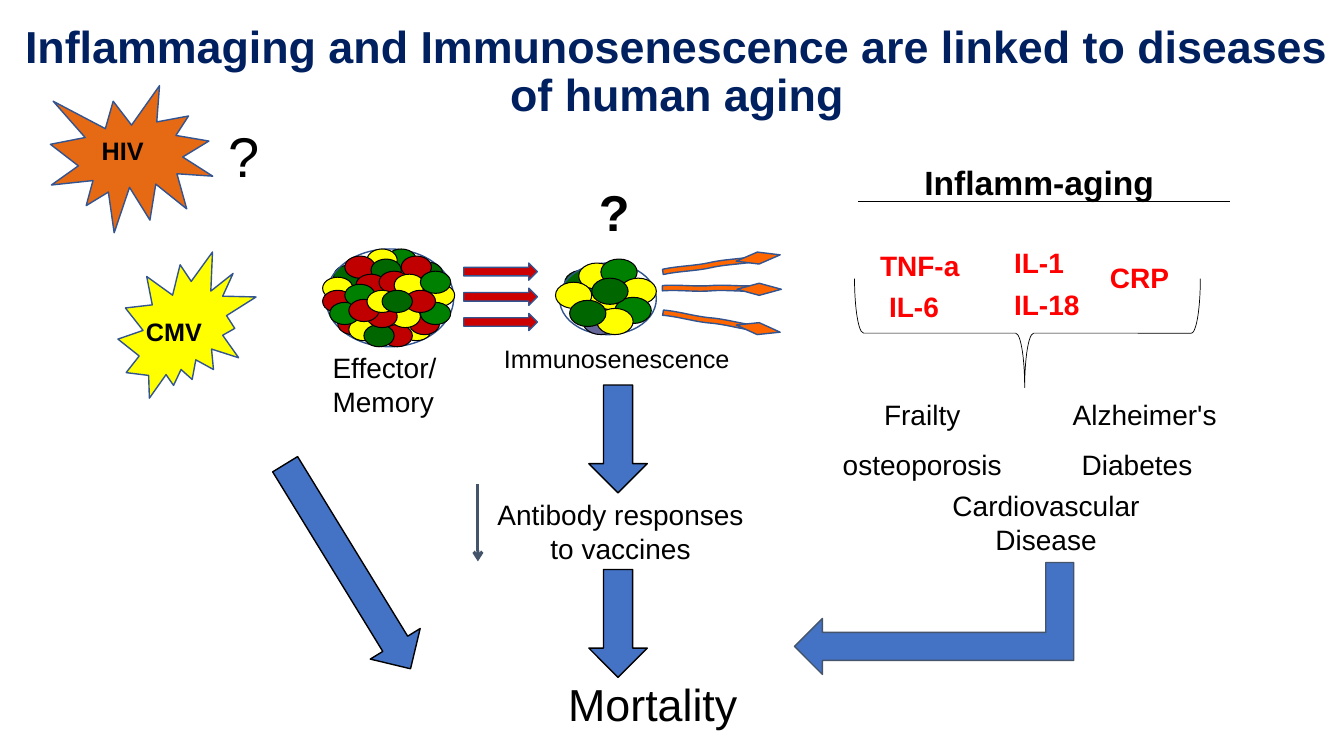
import pptx
import pptx.util
import pptx.dml.color
import pptx.enum.shapes
import pptx.enum.text
import pptx.oxml
import pptx.oxml.ns
from dataclasses import dataclass

Inches = pptx.util.Inches
MSO = pptx.enum.shapes.MSO_SHAPE
ALIGN = pptx.enum.text.PP_ALIGN


@dataclass(frozen=True)
class Theme:
    font: str = "Arial"
    navy: str = "002060"
    black: str = "000000"
    marker_red: str = "FF0000"
    arrow_blue: str = "4472C4"
    outline: str = "325491"
    slate: str = "44546A"
    arrow_red: str = "CC0000"
    antibody: str = "FF6600"
    hiv: str = "E66914"
    dark_green: str = "006600"
    green: str = "008000"
    yellow: str = "FFFF00"
    red: str = "C00000"
    teal: str = "008080"
    violet: str = "666699"
    title: int = 32
    huge: int = 40
    large: int = 36
    heading: int = 24
    body: int = 20
    small: int = 18


class Canvas:
    def __init__(self, slide, theme):
        self.slide = slide
        self.theme = theme

    def text(self, x, y, w, h, text, size=None, color=None, bold=False,
             align=ALIGN.LEFT, wrap=False):
        """Place text; each newline starts a paragraph, each \\v a line break."""
        box = self.slide.shapes.add_textbox(Inches(x), Inches(y), Inches(w), Inches(h))
        tf = box.text_frame
        tf.word_wrap = wrap
        tf.text = text
        for p in tf.paragraphs:
            p.alignment = align
            p.font.name = self.theme.font
            p.font.size = pptx.util.Pt(size or self.theme.body)
            p.font.bold = bold
            p.font.color.rgb = rgb(color or self.theme.black)
        return tf

    def shape(self, kind, x, y, w, h, fill=None, line=None, width=1, rotation=0):
        sp = self.slide.shapes.add_shape(kind, Inches(x), Inches(y), Inches(w), Inches(h))
        sp.shadow.inherit = False
        if fill:
            sp.fill.solid()
            sp.fill.fore_color.rgb = rgb(fill)
        else:
            sp.fill.background()
        sp.line.color.rgb = rgb(line or self.theme.outline)
        sp.line.width = pptx.util.Pt(width)
        sp.rotation = rotation
        return sp

    def line(self, x1, y1, x2, y2, color, width, arrow=False):
        cxn = self.slide.shapes.add_connector(
            pptx.enum.shapes.MSO_CONNECTOR.STRAIGHT,
            Inches(x1), Inches(y1), Inches(x2), Inches(y2))
        cxn.line.color.rgb = rgb(color)
        cxn.line.width = pptx.util.Pt(width)
        if arrow:
            ln = cxn.line._get_or_add_ln()
            ln.append(pptx.oxml.parse_xml(
                f'<a:tailEnd {pptx.oxml.ns.nsdecls("a")} type="arrow"/>'))
        cxn._element.spPr.append(pptx.oxml.parse_xml(
            f'<a:effectLst {pptx.oxml.ns.nsdecls("a")}/>'))

    def cluster(self, outline, cell_size, cells):
        """Draw cells back to front, with the outline just above the first one."""
        for i, (color, x, y) in enumerate(cells):
            self.shape(MSO.OVAL, x, y, *cell_size, color, self.theme.black, 0.75)
            if i == 0:
                self.shape(MSO.OVAL, *outline)

    def antibody(self, shaft_y, tip_x, tip_y, rotation):
        for kind, box in ((MSO.DOUBLE_WAVE, (6.57, shaft_y, 0.96, 0.06)),
                          (MSO.FLOWCHART_DECISION, (tip_x, tip_y, 0.44, 0.12))):
            self.shape(kind, *box, self.theme.antibody, rotation=rotation)


def rgb(color):
    return pptx.dml.color.RGBColor.from_string(color)


def draw_cells(c):
    t = c.theme
    D, G, Y, R = t.dark_green, t.green, t.yellow, t.red
    c.cluster((3.23, 2.47, 1.27, 0.97), (0.3, 0.22), [
        (D, 3.31, 2.63), (G, 3.83, 2.47), (Y, 3.64, 2.47), (R, 3.42, 2.54),
        (Y, 3.98, 3.16), (R, 3.35, 3.1), (Y, 4.21, 2.82), (R, 4.06, 3.1),
        (Y, 3.2, 2.75), (Y, 3.46, 3.16), (D, 4.09, 2.6), (D, 3.68, 2.57),
        (R, 3.79, 3.22), (D, 3.61, 3.22), (R, 3.53, 2.72), (R, 3.2, 2.88),
        (R, 3.98, 2.54), (Y, 3.87, 3.03), (G, 3.27, 3), (R, 3.76, 2.69),
        (Y, 3.91, 2.72), (G, 3.42, 2.82), (R, 3.64, 3.03), (G, 4.17, 3),
        (R, 3.46, 2.97), (Y, 3.64, 2.88), (G, 4.17, 2.69), (R, 4.02, 2.88),
        (D, 3.79, 2.88)])
    for i in range(3):
        c.shape(MSO.RIGHT_ARROW, 4.6, 2.61 + 0.25 * i, 0.73, 0.17, t.arrow_red)
    c.text(3.2, 3.43, 1.24, 0.77, "Effector/\nMemory")

    c.cluster((5.55, 2.61, 0.96, 0.71), (0.36, 0.26), [
        (D, 5.6, 2.68), (t.teal, 5.69, 2.83), (Y, 5.74, 2.61), (G, 5.96, 2.57),
        (Y, 5.78, 2.91), (t.violet, 5.78, 3.06), (Y, 6.15, 2.76), (G, 6.1, 2.95),
        (Y, 5.51, 2.8), (Y, 5.92, 3.06), (D, 5.87, 2.76), (D, 5.65, 2.98)])
    c.text(4.9, 3.36, 2.46, 0.4, "Immunosenescence", t.small)
    for antibody in ((2.6, 7.3, 2.5, -8.2), (2.83, 7.31, 2.81, 0), (3.15, 7.3, 3.2, 9.3)):
        c.antibody(*antibody)
    c.text(5.84, 1.75, 0.51, 0.71, "?", t.large, bold=True)


def draw_inflammaging(c):
    t = c.theme
    c.text(9.07, 1.56, 2.5, 0.5, "Inflamm-aging", t.heading, bold=True)
    c.line(8.51, 2, 12.2, 2, t.black, 0.5)
    for name, x, y, w in (("TNF-a", 8.63, 2.42, 1), ("IL-6", 8.72, 2.82, 0.7),
                          ("IL-1", 9.96, 2.39, 0.7), ("IL-18", 9.96, 2.8, 0.86),
                          ("CRP", 10.91, 2.54, 0.8)):
        c.text(x, y, w, 0.44, name, color=t.marker_red, bold=True)
    brace = c.shape(MSO.RIGHT_BRACE, 9.65, 1.59, 1.08, 3.43,
                    line=t.black, width=0.5, rotation=90)
    brace.adjustments[0] = 0.083
    brace.adjustments[1] = 0.508
    for disease, x, y, w in (("Frailty", 8.67, 3.89, 0.97),
                             ("Alzheimer's", 10.54, 3.89, 1.64),
                             ("osteoporosis", 8.26, 4.39, 1.79),
                             ("Diabetes", 10.63, 4.39, 1.31)):
        c.text(x, y, w, 0.44, disease)
    c.text(9.34, 4.8, 2.07, 0.77, "Cardiovascular\nDisease", align=ALIGN.CENTER)


def draw_outcomes(c):
    t = c.theme
    for x, y, h, rotation in ((5.84, 3.82, 1.07, 0), (5.84, 5.65, 1.07, 0),
                              (3.16, 4.43, 2.38, -31.5)):
        c.shape(MSO.DOWN_ARROW, x, y, 0.58, h, t.arrow_blue, t.black, rotation=rotation)
    bent = c.shape(MSO.BENT_UP_ARROW, 8.71, 4.75, 1.11, 2.77,
                   t.arrow_blue, t.slate, rotation=90)
    bent._element.spPr.find(pptx.oxml.ns.qn("a:xfrm")).set("flipV", "1")
    c.line(4.74, 4.8, 4.74, 5.57, t.slate, 2.25, arrow=True)
    c.text(4.82, 4.89, 2.67, 0.77, "Antibody responses\nto vaccines", align=ALIGN.CENTER)
    c.text(1.19, 6.66, 10.57, 0.64, "Mortality", t.title, align=ALIGN.CENTER, wrap=True)


def draw_viruses(c):
    t = c.theme
    c.shape(MSO.EXPLOSION2, 1.17, 2.5, 1.37, 1.45, t.yellow)
    c.text(1.35, 3.09, 0.76, 0.4, "CMV", t.small, bold=True)
    c.shape(MSO.EXPLOSION1, 0.5, 0.85, 1.61, 1.46, t.hiv)
    c.text(0.91, 1.29, 0.62, 0.4, "HIV", t.small, bold=True)
    c.text(2.17, 1.16, 0.51, 0.77, "?", t.huge)


def main():
    prs = pptx.Presentation()
    prs.slide_width = Inches(13.33)
    prs.slide_height = Inches(7.5)
    c = Canvas(prs.slides.add_slide(prs.slide_layouts[6]), Theme())
    title = c.text(0.12, 0, 13.19, 1.45,
                   "Inflammaging and Immunosenescence are linked to diseases\vof human aging",
                   c.theme.title, c.theme.navy, True, ALIGN.CENTER, True)
    title.vertical_anchor = pptx.enum.text.MSO_ANCHOR.MIDDLE
    title.paragraphs[0].line_spacing = 0.9
    draw_cells(c)
    draw_inflammaging(c)
    draw_outcomes(c)
    draw_viruses(c)
    prs.save("out.pptx")


if __name__ == "__main__":
    main()
